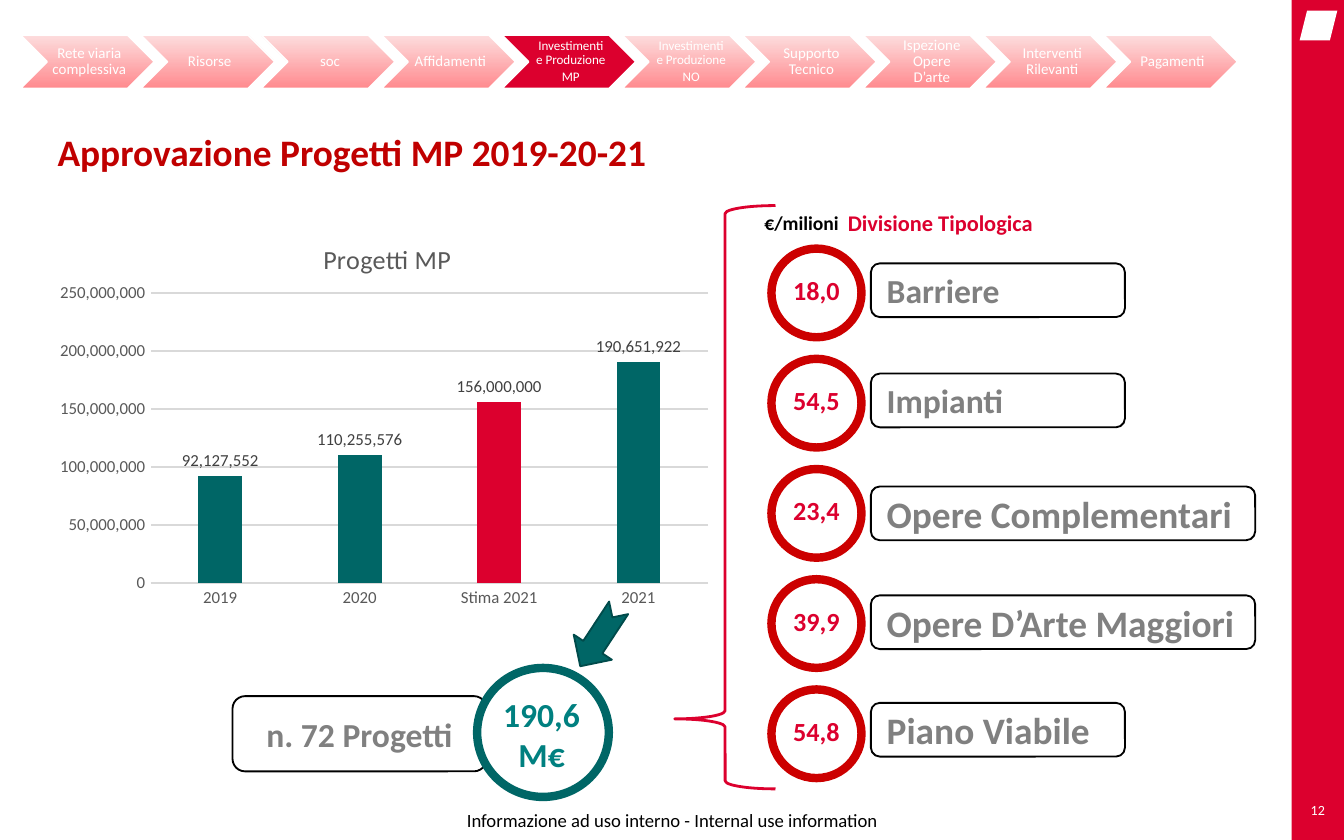
from lxml.etree import SubElement
from pptx import Presentation
from pptx.chart.data import CategoryChartData
from pptx.dml.color import RGBColor
from pptx.enum.chart import XL_CHART_TYPE, XL_LABEL_POSITION, XL_TICK_MARK
from pptx.enum.shapes import MSO_SHAPE
from pptx.enum.text import MSO_ANCHOR, PP_ALIGN
from pptx.oxml.ns import qn
from pptx.util import Inches, Pt

RED, DARK_RED, TEAL, GREY = "DC002E", "CC0000", "006666", "808080"
WHITE, BLACK = "FFFFFF", "000000"
AXIS_GREY, GRID_GREY = "595959", "D9D9D9"
CENTER = dict(alignment=PP_ALIGN.CENTER)


def rgb(value):
    return RGBColor.from_string(value)


def set_all(target, values):
    for name, value in values.items():
        setattr(target, name, value)


class SlideBuilder:
    font_name = "Calibri"

    def __init__(self, slide):
        self.slide = slide

    def style_font(self, font, size, color, bold=False):
        set_all(font, dict(name=self.font_name, size=Pt(size), bold=bold))
        font.color.rgb = rgb(color)

    def fill_text(self, shape, content, size, color, bold=False, insets=(0.1, 0.05, 0.1, 0.05),
                  anchor=MSO_ANCHOR.MIDDLE, wrap=True, paragraph_format=None):
        frame = shape.text_frame
        set_all(frame, dict(word_wrap=wrap, vertical_anchor=anchor))
        sides = ("margin_left", "margin_top", "margin_right", "margin_bottom")
        set_all(frame, {side: Inches(inset) for side, inset in zip(sides, insets)})
        frame.text = content
        for paragraph in frame.paragraphs:
            set_all(paragraph, dict(alignment=PP_ALIGN.LEFT) | (paragraph_format or {}))
            self.style_font(paragraph.font, size, color, bold)

    def text(self, box, content, size, color, **options):
        textbox = self.slide.shapes.add_textbox(*map(Inches, box))
        self.fill_text(textbox, content, size, color, **options)

    def shape(self, kind, box, fill=None, line=None, width=1.0, rotation=0, adjustments=()):
        shape = self.slide.shapes.add_shape(kind, *map(Inches, box))
        shape.shadow.inherit = False
        shape.rotation = rotation
        for index, value in enumerate(adjustments):
            shape.adjustments[index] = value
        if fill:
            shape.fill.solid()
            shape.fill.fore_color.rgb = rgb(fill)
        else:
            shape.fill.background()
        if line:
            shape.line.color.rgb = rgb(line)
            shape.line.width = Pt(width)
        else:
            shape.line.fill.background()
        return shape

    def pill(self, box, content, size, **options):
        pill = self.shape(MSO_SHAPE.ROUNDED_RECTANGLE, box, WHITE, BLACK)
        self.fill_text(pill, content, size, GREY, bold=True, **options)

    def step(self, left, label, size, active):
        chevron = self.shape(MSO_SHAPE.CHEVRON, (left, 0.26, 1, 0.4), RED, WHITE)
        if not active:
            chevron.fill.gradient()
            chevron.fill.gradient_angle = 90
            for stop, color in zip(chevron.fill.gradient_stops, ("FF8A8E", "FDDDDE")):
                stop.color.rgb = rgb(color)
        self.text((left + 0.2, 0.26, 0.6, 0.4), label, size, WHITE,
                  insets=(0.04, 0.01, 0.01, 0.01),
                  paragraph_format=CENTER | dict(line_spacing=0.9, space_after=Pt(1.5)))

    def place(self, element, index, **values):
        """Give a chart part a manual layout, in fractions of the chart."""
        for old in element.findall(qn("c:layout")):
            element.remove(old)
        layout = element.makeelement(qn("c:layout"))
        element.insert(index, layout)
        manual = SubElement(layout, qn("c:manualLayout"))
        for name, value in values.items():
            SubElement(manual, qn(f"c:{name}")).set("val", str(value))

    def column_chart(self, box, title, categories, values, highlight):
        data = CategoryChartData(number_format="#,##0")
        data.categories = categories
        data.add_series(title, values)
        chart = self.slide.shapes.add_chart(
            XL_CHART_TYPE.COLUMN_CLUSTERED, *map(Inches, box), data).chart
        self.style_font(chart.font, 10, BLACK)
        chart.has_legend = False
        chart.has_title = True
        heading = chart.chart_title.text_frame
        heading.text = title
        self.style_font(heading.paragraphs[0].font, 14, AXIS_GREY)
        self.place(chart.chart_title.element, 1, xMode="edge", yMode="edge", x=0.4, y=0.06)
        self.place(chart.element.find(".//" + qn("c:plotArea")), 0, layoutTarget="inner",
                   xMode="edge", yMode="edge", x=0.15, y=0.2, w=0.83, h=0.72)

        # Axes
        for axis in (chart.category_axis, chart.value_axis):
            set_all(axis, dict(major_tick_mark=XL_TICK_MARK.NONE,
                               minor_tick_mark=XL_TICK_MARK.NONE))
            self.style_font(axis.tick_labels.font, 9, AXIS_GREY)
        set_all(chart.value_axis, dict(minimum_scale=0, maximum_scale=250_000_000,
                                       major_unit=50_000_000, has_major_gridlines=True))
        set_all(chart.value_axis.tick_labels,
                dict(number_format="#,##0", number_format_is_linked=False))
        chart.value_axis.format.line.fill.background()
        for ruled in (chart.category_axis, chart.value_axis.major_gridlines):
            ruled.format.line.color.rgb = rgb(GRID_GREY)
            ruled.format.line.width = Pt(0.75)

        # Columns and their labels
        plot = chart.plots[0]
        set_all(plot, dict(gap_width=219, overlap=-27, vary_by_categories=False,
                           has_data_labels=True))
        series = plot.series[0]
        for part, color in ((series, TEAL), (series.points[highlight], RED)):
            part.format.fill.solid()
            part.format.fill.fore_color.rgb = rgb(color)
        set_all(plot.data_labels, dict(show_value=True, number_format="#,##0",
                                       number_format_is_linked=False,
                                       position=XL_LABEL_POSITION.OUTSIDE_END))
        self.style_font(plot.data_labels.font, 9, "404040")


def main():
    presentation = Presentation()
    set_all(presentation, dict(slide_width=Inches(10), slide_height=Inches(6.25)))
    page = SlideBuilder(presentation.slides.add_slide(presentation.slide_layouts[6]))

    # Side band and footer
    page.shape(MSO_SHAPE.RECTANGLE, (9.61, 0, 0.39, 6.25), RED)
    page.shape(MSO_SHAPE.PARALLELOGRAM, (9.67, 0.08, 0.28, 0.22), WHITE)
    no_insets = dict(insets=(0, 0, 0, 0), paragraph_format=CENTER)
    page.text((9.61, 5.92, 0.39, 0.21), "12", 7.5, WHITE, wrap=False, **no_insets)
    page.text((3.27, 5.96, 3.46, 0.29),
              "Informazione ad uso interno - Internal use information", 10, BLACK, **no_insets)

    # Title
    page.text((0.33, 0.95, 9.17, 0.58), "Approvazione Progetti MP 2019-20-21", 20, "C00000",
              bold=True, anchor=MSO_ANCHOR.TOP, paragraph_format=dict(line_spacing=0.9))

    # Navigation steps
    steps = ["Rete viaria complessiva", "Risorse", "soc", "Affidamenti",
             "Investimenti e Produzione\nMP", "Investimenti e Produzione\nNO",
             "Supporto Tecnico", "Ispezione Opere D’arte", "Interventi Rilevanti", "Pagamenti"]
    for index, label in enumerate(steps):
        page.step(0.15 + index * 8.06 / 9, label, 7 if "\n" in label else 8, active=index == 4)

    # Yearly totals, leading to the 2021 amount
    page.pill((1.73, 5.18, 1.89, 0.56), "n. 72 Progetti", 18, paragraph_format=CENTER)
    page.shape(MSO_SHAPE.OVAL, (3.55, 4.97, 0.98, 0.96), WHITE, TEAL, 4.5)
    page.text((3.55, 5.18, 0.96, 0.56), "190,6M€", 18, "008080", bold=True,
              paragraph_format=CENTER)
    page.shape(MSO_SHAPE.NOTCHED_RIGHT_ARROW, (4.2, 4.57, 0.52, 0.34), TEAL, "004B4B",
               rotation=123.3)
    page.column_chart((0.37, 1.58, 5, 3), "Progetti MP", ["2019", "2020", "Stima 2021", "2021"],
                      [92127552, 110255576, 156000000, 190651922], highlight=2)

    # Breakdown by type
    page.shape(MSO_SHAPE.LEFT_BRACE, (5.02, 1.53, 0.75, 4.34), line=RED, width=1.5,
               adjustments=(0.08, 0.88))
    heading = dict(bold=True, anchor=MSO_ANCHOR.TOP)
    page.text((6.21, 1.51, 2.75, 0.3), "Divisione Tipologica", 12, RED, **heading)
    page.text((5.59, 1.52, 1.2, 0.28), "€/milioni", 10.5, BLACK, **heading)
    types = [("18,0", "Barriere", 1.96, 1.89, 18),
             ("54,5", "Impianti", 2.78, 1.89, 18),
             ("23,4", "Opere Complementari", 3.62, 2.86, 20),
             ("39,9", "Opere D’Arte Maggiori", 4.43, 2.86, 20),
             ("54,8", "Piano Viabile", 5.23, 1.89, 20)]
    for index, (amount, label, top, width, size) in enumerate(types):
        circle = page.shape(MSO_SHAPE.OVAL, (5.74, 1.85 + index * 0.82, 0.67, 0.66),
                            WHITE, DARK_RED, 4.5)
        page.fill_text(circle, amount, 14, RED, bold=True, insets=(0, 0.12, 0, 0),
                       anchor=MSO_ANCHOR.TOP,
                       paragraph_format=CENTER | dict(line_spacing=Pt(15)))
        page.pill((6.48, top, width, 0.4), label, size)

    presentation.save("out.pptx")


if __name__ == "__main__":
    main()
